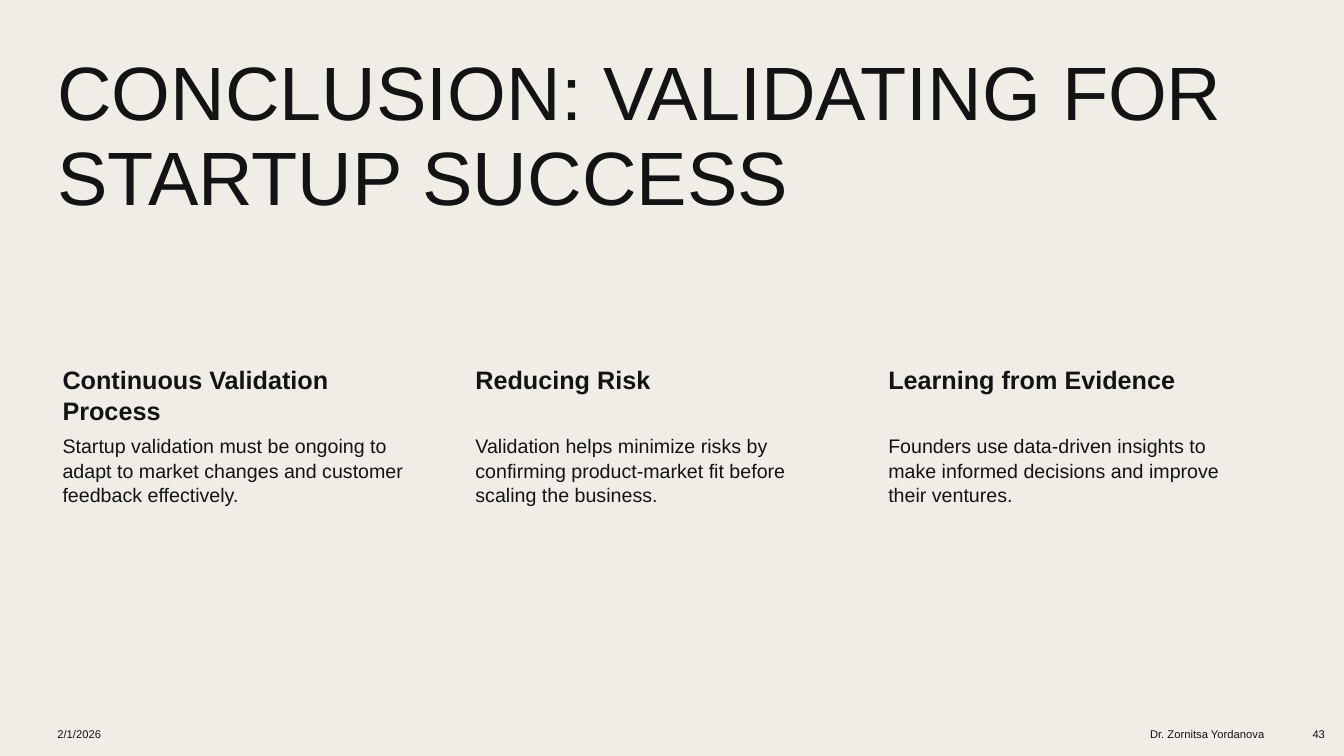
"""Build the closing slide on validating for startup success."""
from pptx import Presentation
from pptx.dml.color import RGBColor as Rgb
from pptx.enum.text import MSO_ANCHOR as Anchor, PP_ALIGN as Align
from pptx.util import Inches, Pt

TITLE = "CONCLUSION: VALIDATING FOR STARTUP SUCCESS"
POINTS = [
    ("Continuous Validation Process",
     "Startup validation must be ongoing to adapt to market changes and customer feedback effectively."),
    ("Reducing Risk",
     "Validation helps minimize risks by confirming product-market fit before scaling the business."),
    ("Learning from Evidence",
     "Founders use data-driven insights to make informed decisions and improve their ventures."),
]
FOOTER = [
    ("2/1/2026", 0.47, 3.11, Align.LEFT),
    ("Dr. Zornitsa Yordanova", 9.73, 2.91, Align.RIGHT),
    ("43", 12.74, 0.5, Align.RIGHT),
]
THEME = {"font": "Arial", "ink": "131313", "paper": "F0EDE6",
         "title": 54, "head": 18, "body": 14, "foot": 8}
LEFT, WIDTH, STEP = 0.47, 3.72, 4.095
HEAD_TOP, HEAD_TALL, BODY_TALL = 3.57, 0.71, 2.39
FOOT_TOP, FOOT_TALL = 7.1, 0.37


def write(slide, text, box, size, bold=False, align=Align.LEFT,
          anchor=Anchor.TOP, pads=(0.1, 0.05, 0.1, 0.05), line=1.0):
    frame = slide.shapes.add_textbox(*map(Inches, box)).text_frame
    frame.word_wrap = True
    frame.vertical_anchor = anchor
    (frame.margin_left, frame.margin_top,
     frame.margin_right, frame.margin_bottom) = map(Inches, pads)
    para = frame.paragraphs[0]
    para.alignment, para.line_spacing = align, line
    run = para.add_run()
    run.text = text
    run.font.name, run.font.size = THEME["font"], Pt(THEME[size])
    run.font.bold = bold
    run.font.color.rgb = Rgb.from_string(THEME["ink"])


def main():
    deck = Presentation()
    deck.slide_width, deck.slide_height = Inches(13.33), Inches(7.5)
    slide = deck.slides.add_slide(deck.slide_layouts[6])
    fill = slide.background.fill
    fill.solid()
    fill.fore_color.rgb = Rgb.from_string(THEME["paper"])

    write(slide, TITLE, (LEFT, 0.47, 11.91, 1.78), "title", line=0.94)
    for col, (head, body) in enumerate(POINTS):
        left = LEFT + col * STEP
        write(slide, head, (left, HEAD_TOP, WIDTH, HEAD_TALL), "head",
              bold=True, pads=(0.15, 0.03, 0.03, 0.03), line=1.04)
        write(slide, body, (left, HEAD_TOP + HEAD_TALL, WIDTH, BODY_TALL),
              "body", pads=(0.15, 0.02, 0.02, 0.02), line=1.04)
    for text, left, width, align in FOOTER:
        write(slide, text, (left, FOOT_TOP, width, FOOT_TALL), "foot",
              align=align, anchor=Anchor.MIDDLE)
    deck.save("out.pptx")


if __name__ == "__main__":
    main()
